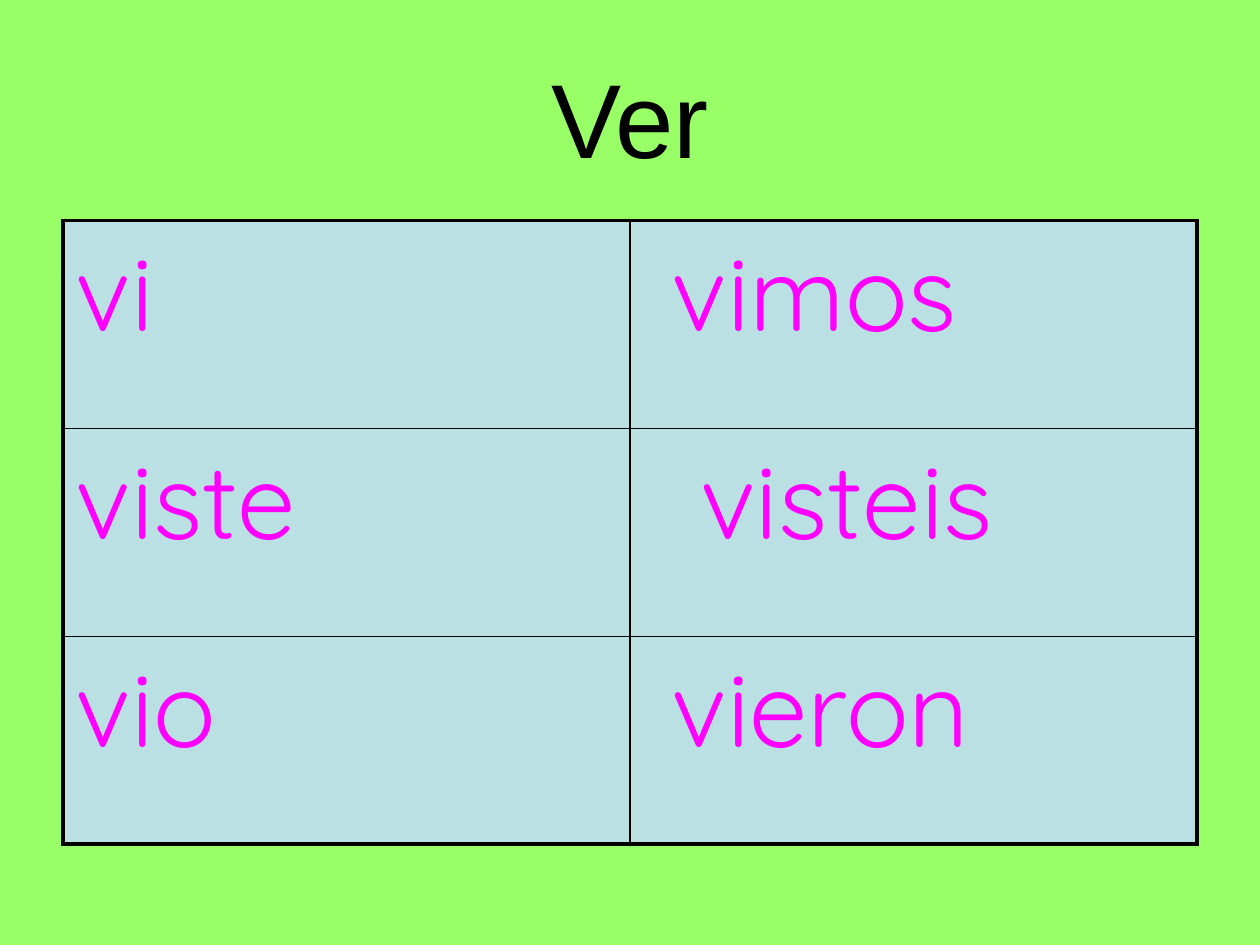
from lxml import etree
from pptx import Presentation
from pptx.dml.color import RGBColor
from pptx.enum import text
from pptx.oxml import ns
from pptx.util import Pt

COLORS = {"background": "99FF66", "cell": "BBE0E3", "verb": "FF00FF", "ink": "000000"}
SIZE = 60
INDENT = 16.5  # one step of extra left margin in a cell
OUTER, INNER = 2.25, 1

# Each form with its number of indent steps
FORMS = [
    [("vi", 0), ("vimos", 1)],
    [("viste", 0), ("visteis", 2)],
    [("vio", 0), ("vieron", 1)],
]


def rgb(name):
    return RGBColor.from_string(COLORS[name])


def add_run(paragraph, words, font, color):
    run = paragraph.add_run()
    run.text = words
    run.font.name = font
    run.font.size = Pt(SIZE)
    run.font.color.rgb = rgb(color)


def set_borders(cell, widths):
    """Draw the sides in schema order, ahead of the cell fill."""
    properties = cell._tc.get_or_add_tcPr()
    for position, side in enumerate(("L", "R", "T", "B")):
        line = etree.Element(ns.qn(f"a:ln{side}"), w=str(Pt(widths[side])))
        fill = etree.SubElement(line, ns.qn("a:solidFill"))
        etree.SubElement(fill, ns.qn("a:srgbClr"), val=COLORS["ink"])
        properties.insert(position, line)


def place_title(slide, left, top, width, height):
    title = slide.shapes.title
    title.left, title.top = Pt(left), Pt(top)
    title.width, title.height = Pt(width), Pt(height)
    frame = title.text_frame
    frame.vertical_anchor = text.MSO_ANCHOR.MIDDLE
    frame.paragraphs[0].alignment = text.PP_ALIGN.CENTER
    add_run(frame.paragraphs[0], "Ver", "Arial", "ink")


def place_conjugation(slide, left, top, width, height):
    last_row, last_column = len(FORMS) - 1, len(FORMS[0]) - 1
    table = slide.shapes.add_table(
        len(FORMS), len(FORMS[0]), Pt(left), Pt(top), Pt(width), Pt(height)
    ).table
    table.first_row = table.horz_banding = False
    for r, forms in enumerate(FORMS):
        for c, (form, steps) in enumerate(forms):
            cell = table.cell(r, c)
            cell.fill.solid()
            cell.fill.fore_color.rgb = rgb("cell")
            cell.margin_left = Pt(7.2 + INDENT * steps)
            set_borders(cell, {
                "L": OUTER if c == 0 else INNER,
                "R": OUTER if c == last_column else INNER,
                "T": OUTER if r == 0 else INNER,
                "B": OUTER if r == last_row else INNER,
            })
            add_run(cell.text_frame.paragraphs[0], form, "Quicksand", "verb")


def main():
    deck = Presentation()
    deck.slide_width, deck.slide_height = Pt(720), Pt(540)
    slide = deck.slides.add_slide(deck.slide_layouts[5])
    slide.background.fill.solid()
    slide.background.fill.fore_color.rgb = rgb("background")

    place_title(slide, 36, 21.6, 648, 90)
    place_conjugation(slide, 36, 126, 648, 356.4)
    deck.save("out.pptx")


if __name__ == "__main__":
    main()
